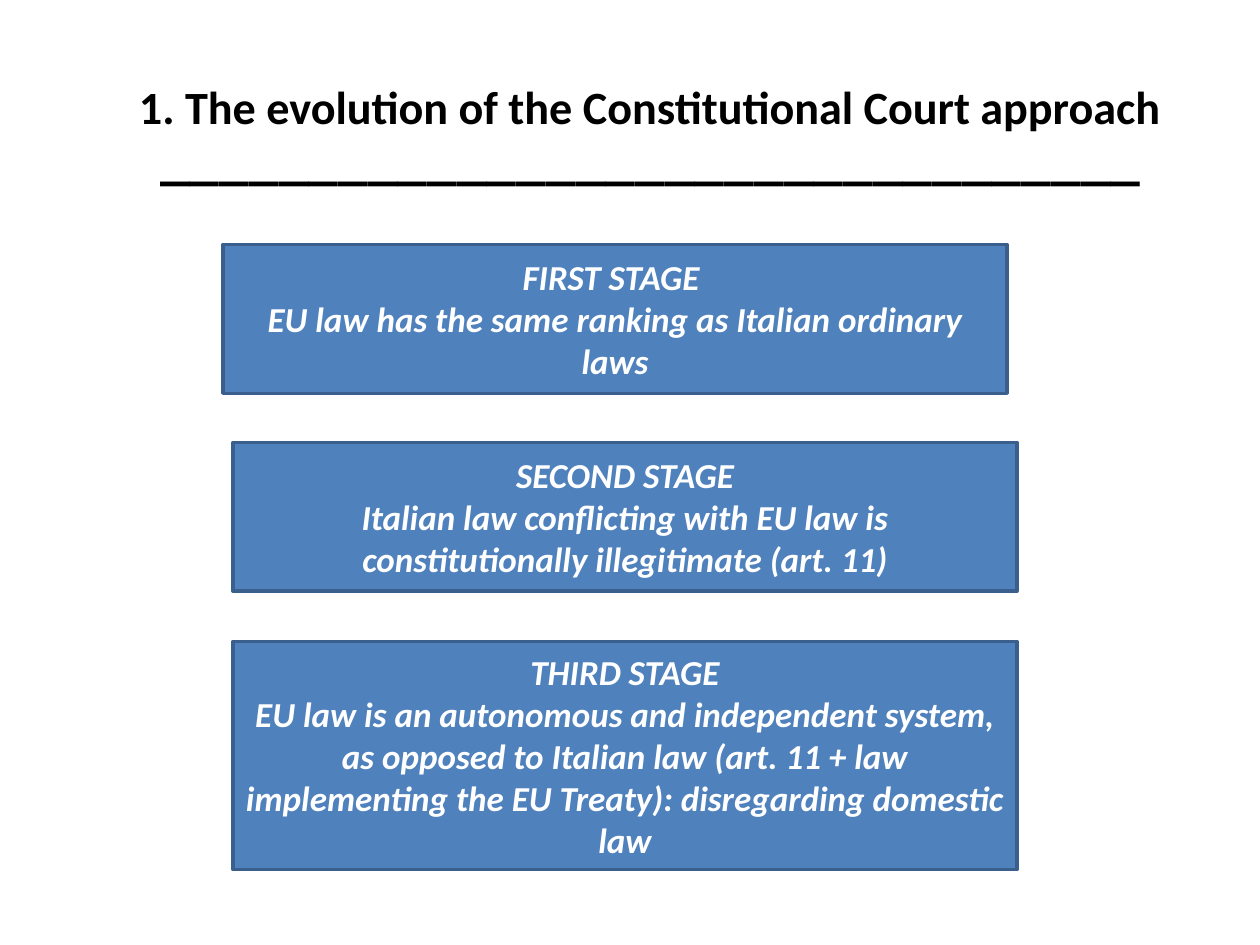
"""Build a slide on the three stages of the Constitutional Court approach."""
from pptx import Presentation
from pptx.dml.color import RGBColor
from pptx.enum.shapes import MSO_SHAPE
from pptx.enum.text import MSO_ANCHOR, PP_ALIGN
from pptx.util import Cm, Pt

BLACK = RGBColor(0x00, 0x00, 0x00)
WHITE = RGBColor(0xFF, 0xFF, 0xFF)
BLUE = RGBColor(0x4F, 0x81, 0xBD)
DARK_BLUE = RGBColor(0x3A, 0x5F, 0x8C)

TITLE_LINES = [
    ("1. The evolution of the Constitutional Court approach", 26.4),
    ("_" * 33, 34.1),
]
STAGES = [
    (4.5, 4.93, 3, "FIRST STAGE ",
     "EU law has the same ranking as Italian ordinary laws"),
    (4.7, 8.92, 3, "SECOND STAGE",
     "Italian law conflicting with EU law is constitutionally illegitimate (art. 11)"),
    (4.7, 12.93, 4.6, "THIRD STAGE",
     "EU law is an autonomous and independent system, as opposed to Italian law "
     "(art. 11 + law implementing the EU Treaty): disregarding domestic law"),
]


def write_lines(shape, lines, color, italic=False, spacing=None):
    frame = shape.text_frame
    frame.word_wrap = True
    frame.vertical_anchor = MSO_ANCHOR.MIDDLE
    for index, (text, size) in enumerate(lines):
        para = frame.add_paragraph() if index else frame.paragraphs[0]
        para.alignment = PP_ALIGN.CENTER
        para.line_spacing = spacing
        span = para.add_run()
        span.text = text
        span.font.name = "Calibri"
        span.font.size = Pt(size)
        span.font.bold = True
        span.font.italic = italic
        span.font.color.rgb = color


deck = Presentation()
deck.slide_width, deck.slide_height = Cm(25.4), Cm(19.05)
page = deck.slides.add_slide(deck.slide_layouts[5])

title = page.shapes.title
title.left, title.top, title.width, title.height = Cm(2.31), Cm(0.91), Cm(21.6), Cm(3.81)
write_lines(title, TITLE_LINES, BLACK, spacing=0.8)

for left, top, height, heading, statement in STAGES:
    box = page.shapes.add_shape(
        MSO_SHAPE.RECTANGLE, Cm(left), Cm(top), Cm(15.8), Cm(height))
    box.shadow.inherit = False
    box.fill.solid()
    box.fill.fore_color.rgb = BLUE
    box.line.color.rgb = DARK_BLUE
    box.line.width = Pt(2)
    write_lines(box, [(heading, 20), (statement, 20)], WHITE, italic=True)

deck.save("out.pptx")
